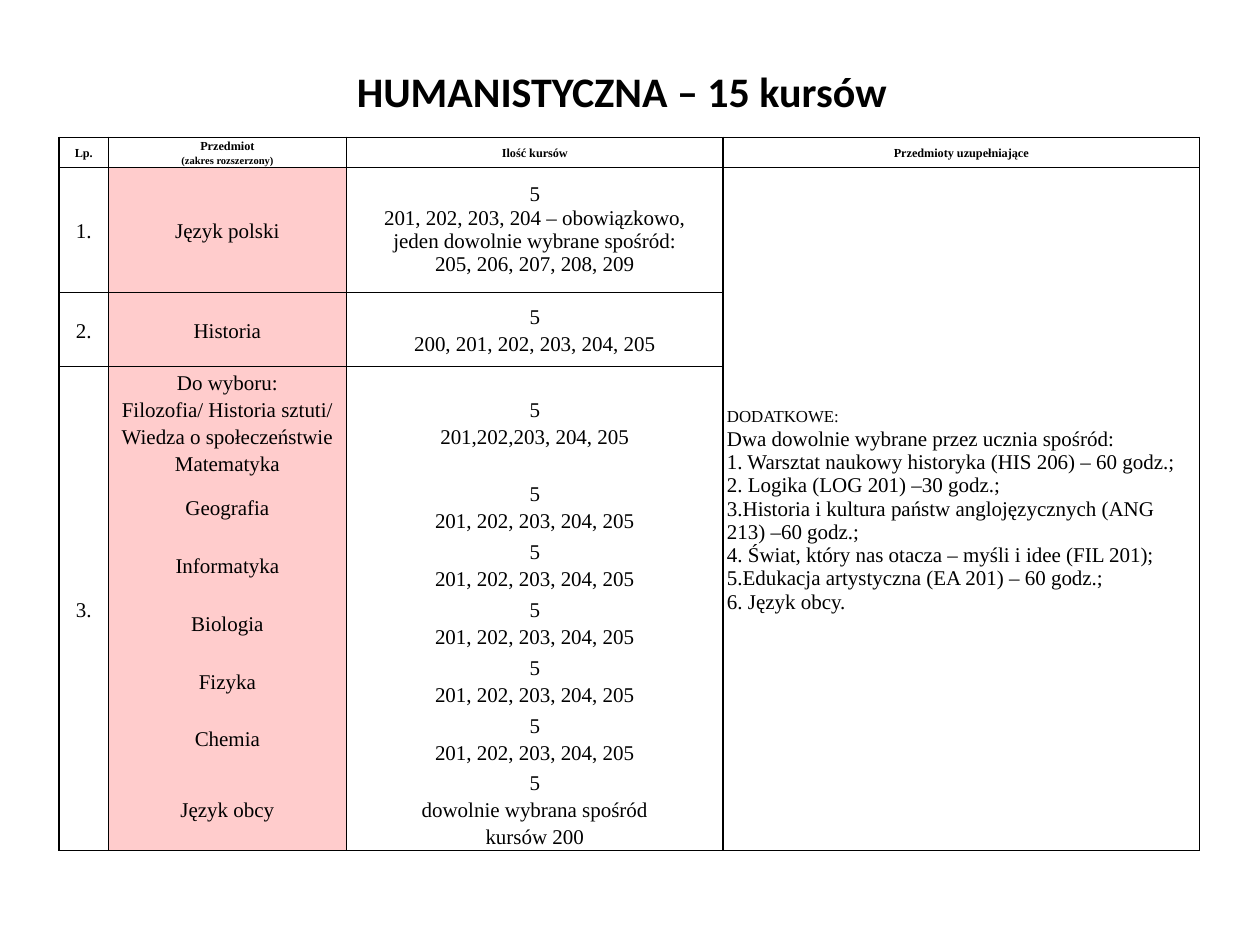
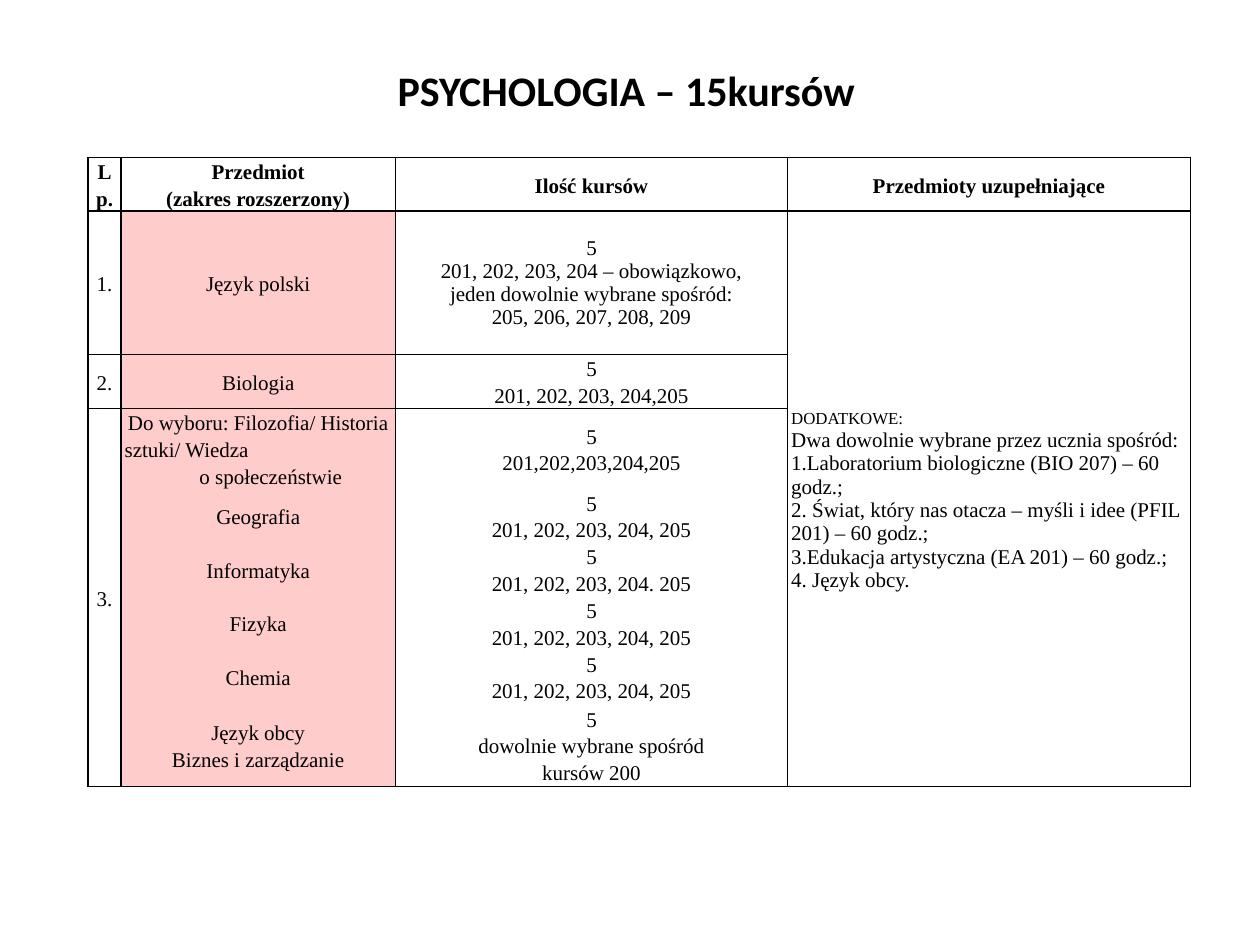
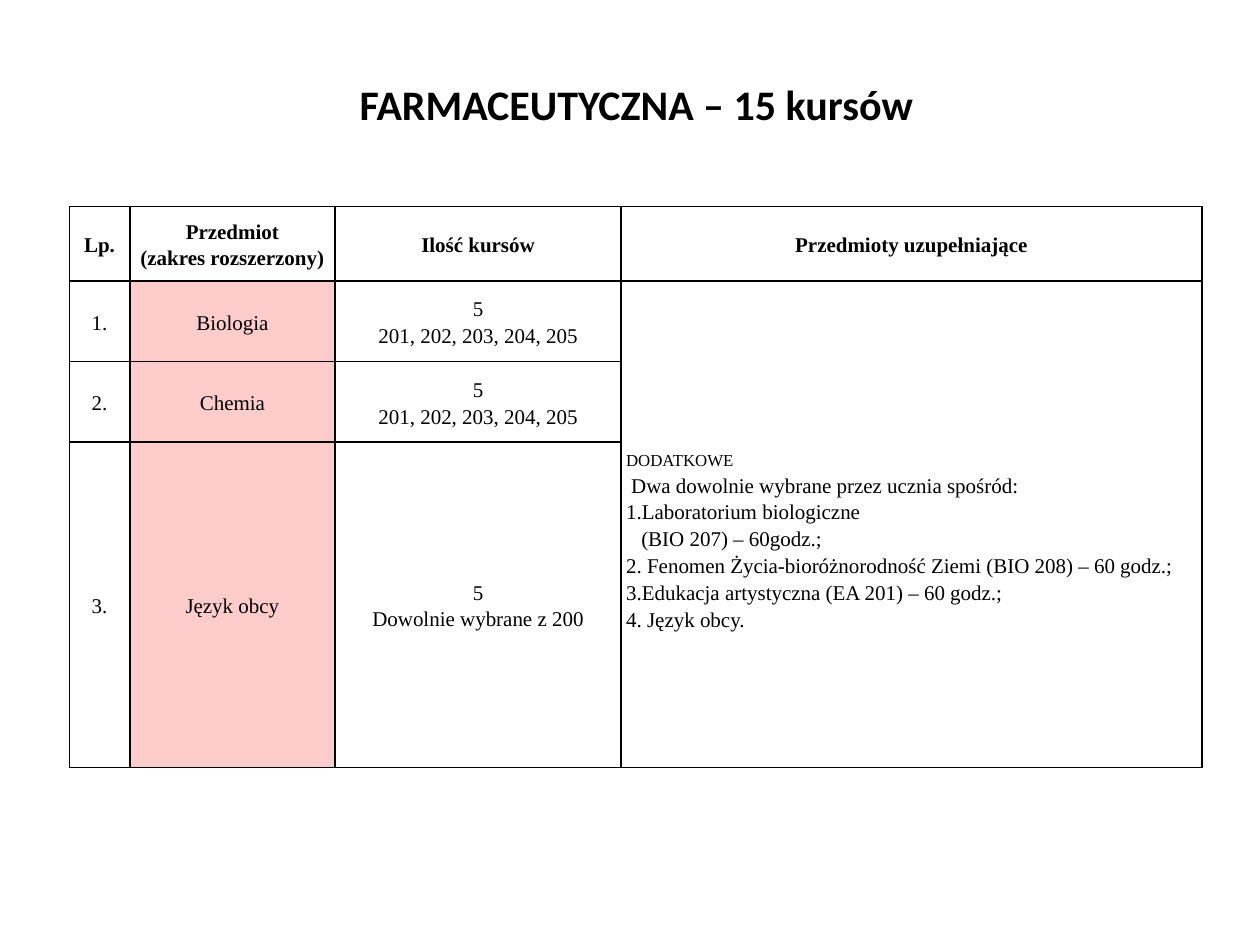
from dataclasses import dataclass, field
from typing import Any, NamedTuple

from lxml.etree import SubElement
from pptx import Presentation
from pptx.dml.color import RGBColor
from pptx.enum.text import MSO_VERTICAL_ANCHOR as Anchor, PP_PARAGRAPH_ALIGNMENT as Align
from pptx.oxml.ns import qn
from pptx.util import Inches, Pt


# Theme shared by all slides
@dataclass(frozen=True)
class Theme:
    ink: str = "000000"
    subject_fill: str = "FFCCCC"
    title_font: str = "Calibri"
    table_font: str = "Times New Roman"
    title_size: float = 24
    table_size: float = 12
    border: float = 1
    loose: float = 1.15
    tight: float = 1.0


THEME = Theme()


# Content model
class Line(NamedTuple):
    text: str
    spacing: float = THEME.loose
    align: Align = Align.CENTER
    indent: float = 0
    size: float = THEME.table_size
    bold: bool = False
    small_caps: bool = False


class Subject(NamedTuple):
    names: list[Line]
    courses: list[Line]


@dataclass
class Profile:
    title: str
    title_box: tuple[float, float, float, float]
    table_origin: tuple[float, float]
    columns: list[float]
    rows: list[float]
    subjects: list[Subject]
    extras: list[Line]
    header_sizes: tuple[float, float] = (THEME.table_size, THEME.table_size)
    side_margin: float = 0.03
    extras_top: float = 0
    required: int = field(default=2)


def lines(*texts: str, **style: Any) -> list[Line]:
    return [Line(text, **style) for text in texts]


def subject(name: str, *courses: str) -> Subject:
    return Subject(lines(name), lines("5", *(courses or ("201, 202, 203, 204, 205",))))


def extra_lines(heading: str, *texts: str, spacing: float = THEME.tight) -> list[Line]:
    style = {"spacing": spacing, "align": Align.LEFT}
    return [Line(heading, small_caps=True, **style), *lines(*texts, **style)]


POLISH = Subject(
    lines("Język polski"),
    lines("5", "201, 202, 203, 204 – obowiązkowo,", "jeden dowolnie wybrane spośród:",
          "205, 206, 207, 208, 209", spacing=THEME.tight),
)
ARTS = "Edukacja artystyczna (EA 201) – 60 godz.;"

PHARMACY_EXTRAS = extra_lines(
    "dodatkowe",
    "Dwa dowolnie wybrane przez ucznia spośród:",
    "1.Laboratorium biologiczne",
    "(BIO 207) – 60godz.;",
    "2. Fenomen Życia-bioróżnorodność Ziemi (BIO 208) – 60 godz.;",
    f"3.{ARTS}",
    "4. Język obcy.",
    spacing=THEME.loose,
)
PHARMACY_EXTRAS[1] = PHARMACY_EXTRAS[1]._replace(indent=0.04)
PHARMACY_EXTRAS[3] = PHARMACY_EXTRAS[3]._replace(indent=0.12)

PROFILES = [
    Profile(
        title="HUMANISTYCZNA – 15 kursów",
        title_box=(0.7, 0.47, 8.47, 0.5),
        table_origin=(0.47, 1.09),
        columns=[0.39, 1.89, 2.99, 3.78],
        rows=[0.24, 0.99, 0.59, 0.88, *[0.46] * 5, 0.66],
        header_sizes=(7, 6),
        subjects=[
            POLISH,
            subject("Historia", "200, 201, 202, 203, 204, 205"),
            Subject(lines("Do wyboru:", "Filozofia/ Historia sztuti/",
                          "Wiedza o społeczeństwie", "Matematyka"),
                    lines("5", "201,202,203, 204, 205")),
            *map(subject, ("Geografia", "Informatyka", "Biologia", "Fizyka", "Chemia")),
            subject("Język obcy", "dowolnie wybrana spośród", "kursów 200"),
        ],
        extras=extra_lines(
            "dodatkowe:",
            "Dwa dowolnie wybrane przez ucznia spośród:",
            "1. Warsztat naukowy historyka (HIS 206) – 60 godz.;",
            "2. Logika (LOG 201) –30 godz.;",
            "3.Historia i kultura państw anglojęzycznych (ANG 213) –60 godz.;",
            "4. Świat, który nas otacza – myśli i idee (FIL 201);",
            f"5.{ARTS}",
            "6. Język obcy.",
        ),
    ),
    Profile(
        title="PSYCHOLOGIA – 15kursów",
        title_box=(0.47, 0.2, 9, 1.03),
        table_origin=(0.7, 1.25),
        columns=[0.26, 2.18, 3.11, 3.2],
        rows=[0.42, 1.14, 0.42, 0.64, *[0.42] * 4, 0.66],
        subjects=[
            POLISH,
            subject("Biologia", "201, 202, 203, 204,205"),
            Subject([Line("Do wyboru: Filozofia/ Historia"),
                     Line("sztuki/ Wiedza", align=Align.LEFT),
                     Line("o społeczeństwie", indent=0.2)],
                    lines("5", "201,202,203,204,205")),
            subject("Geografia"),
            subject("Informatyka", "201, 202, 203, 204. 205"),
            subject("Fizyka"),
            subject("Chemia"),
            Subject(lines("Język obcy", "Biznes i zarządzanie"),
                    lines("5", "dowolnie wybrane spośród", "kursów 200")),
        ],
        extras=extra_lines(
            "dodatkowe:",
            "Dwa dowolnie wybrane przez ucznia spośród:",
            "1.Laboratorium biologiczne (BIO 207) – 60 godz.;",
            "2. Świat, który nas otacza – myśli i idee (PFIL 201) – 60 godz.;",
            f"3.{ARTS}",
            "4. Język obcy.",
        ),
    ),
    Profile(
        title="FARMACEUTYCZNA – 15 kursów",
        title_box=(0.55, 0.31, 9, 1.03),
        table_origin=(0.55, 1.64),
        columns=[0.48, 1.63, 2.27, 4.61],
        rows=[0.59, 0.64, 0.64, 2.58],
        subjects=[subject("Biologia"), subject("Chemia"),
                  subject("Język obcy", "Dowolnie wybrane z 200")],
        extras=PHARMACY_EXTRAS,
        side_margin=0.04,
        extras_top=0.22,
    ),
]


# Formatting helpers
def apply(target: Any, values: dict[str, Any]) -> None:
    for name, value in values.items():
        setattr(target, name, value)


def set_font(font: Any, family: str, size: float, bold: bool) -> None:
    apply(font, {"name": family, "size": Pt(size), "bold": bold})
    font.color.rgb = RGBColor.from_string(THEME.ink)


def write(cell: Any, content: list[Line]) -> None:
    frame = cell.text_frame
    for index, line in enumerate(content):
        paragraph = frame.add_paragraph() if index else frame.paragraphs[0]
        apply(paragraph, {"alignment": line.align, "line_spacing": line.spacing})
        if line.indent:
            paragraph._p.get_or_add_pPr().set("marL", str(Inches(line.indent)))
        run = paragraph.add_run()
        run.text = line.text
        set_font(run.font, THEME.table_font, line.size, line.bold)
        if line.small_caps:
            run._r.get_or_add_rPr().set("cap", "small")


def set_borders(cell: Any, hidden: set[str]) -> None:
    properties = cell._tc.get_or_add_tcPr()
    for index, side in enumerate("LRTB"):
        edge = properties.makeelement(qn(f"a:ln{side}"), {"w": str(Pt(THEME.border))})
        properties.insert(index, edge)
        if side in hidden:
            SubElement(edge, qn("a:noFill"))
        else:
            ink = SubElement(edge, qn("a:solidFill"))
            SubElement(ink, qn("a:srgbClr"), val=THEME.ink)


# Slide parts
def add_title(slide: Any, profile: Profile) -> None:
    title = slide.shapes.title
    apply(title, dict(zip(("left", "top", "width", "height"), map(Inches, profile.title_box))))
    title.text_frame.text = profile.title
    apply(title.text_frame, {"word_wrap": True, "vertical_anchor": Anchor.MIDDLE})
    paragraph = title.text_frame.paragraphs[0]
    paragraph.alignment = Align.CENTER
    set_font(paragraph.runs[0].font, THEME.title_font, THEME.title_size, True)


def style_cells(table: Any, profile: Profile) -> None:
    first_option, last = profile.required + 1, len(profile.rows) - 1
    for row in range(last + 1):
        for column in range(len(profile.columns)):
            cell = table.cell(row, column)
            apply(cell, {"margin_left": Inches(profile.side_margin),
                         "margin_right": Inches(profile.side_margin),
                         "margin_top": 0, "margin_bottom": 0,
                         "vertical_anchor": Anchor.MIDDLE})
            if row and column == 1:
                cell.fill.solid()
                cell.fill.fore_color.rgb = RGBColor.from_string(THEME.subject_fill)
            else:
                cell.fill.background()
            # Optional subjects share one open block
            hidden = set()
            if column in (1, 2) and row >= first_option:
                hidden = ({"T"} if row > first_option else set()) | ({"B"} if row < last else set())
            set_borders(cell, hidden)


def add_courses(slide: Any, profile: Profile) -> None:
    left, top = map(Inches, profile.table_origin)
    table = slide.shapes.add_table(
        len(profile.rows), len(profile.columns), left, top,
        Inches(sum(profile.columns)), Inches(sum(profile.rows))).table
    apply(table, {"first_row": False, "horz_banding": False})
    for column, width in zip(table.columns, profile.columns):
        column.width = Inches(width)
    for row, height in zip(table.rows, profile.rows):
        row.height = Inches(height)
    style_cells(table, profile)

    # Header
    main, note = profile.header_sizes
    headings = ["Lp.", "Przedmiot", "Ilość kursów", "Przedmioty uzupełniające"]
    for column, heading in enumerate(headings):
        content = lines(heading, size=main, bold=True)
        if column == 1:
            content += lines("(zakres rozszerzony)", size=note, bold=True)
        write(table.cell(0, column), content)

    # Subjects and their courses
    for row, entry in enumerate(profile.subjects, start=1):
        if row <= profile.required + 1:
            write(table.cell(row, 0), lines(f"{row}."))
        write(table.cell(row, 1), entry.names)
        write(table.cell(row, 2), entry.courses)

    # Merged number and supplementary cells
    last = len(profile.rows) - 1
    for column, first in ((0, profile.required + 1), (3, 1)):
        if first < last:
            table.cell(first, column).merge(table.cell(last, column))
    extras = table.cell(1, 3)
    extras.margin_top = Inches(profile.extras_top)
    write(extras, profile.extras)


def main() -> None:
    deck = Presentation()
    apply(deck, {"slide_width": Inches(10), "slide_height": Inches(7.5)})
    title_only = deck.slide_layouts[5]
    for profile in PROFILES:
        slide = deck.slides.add_slide(title_only)
        add_title(slide, profile)
        add_courses(slide, profile)
    deck.save("out.pptx")


if __name__ == "__main__":
    main()
